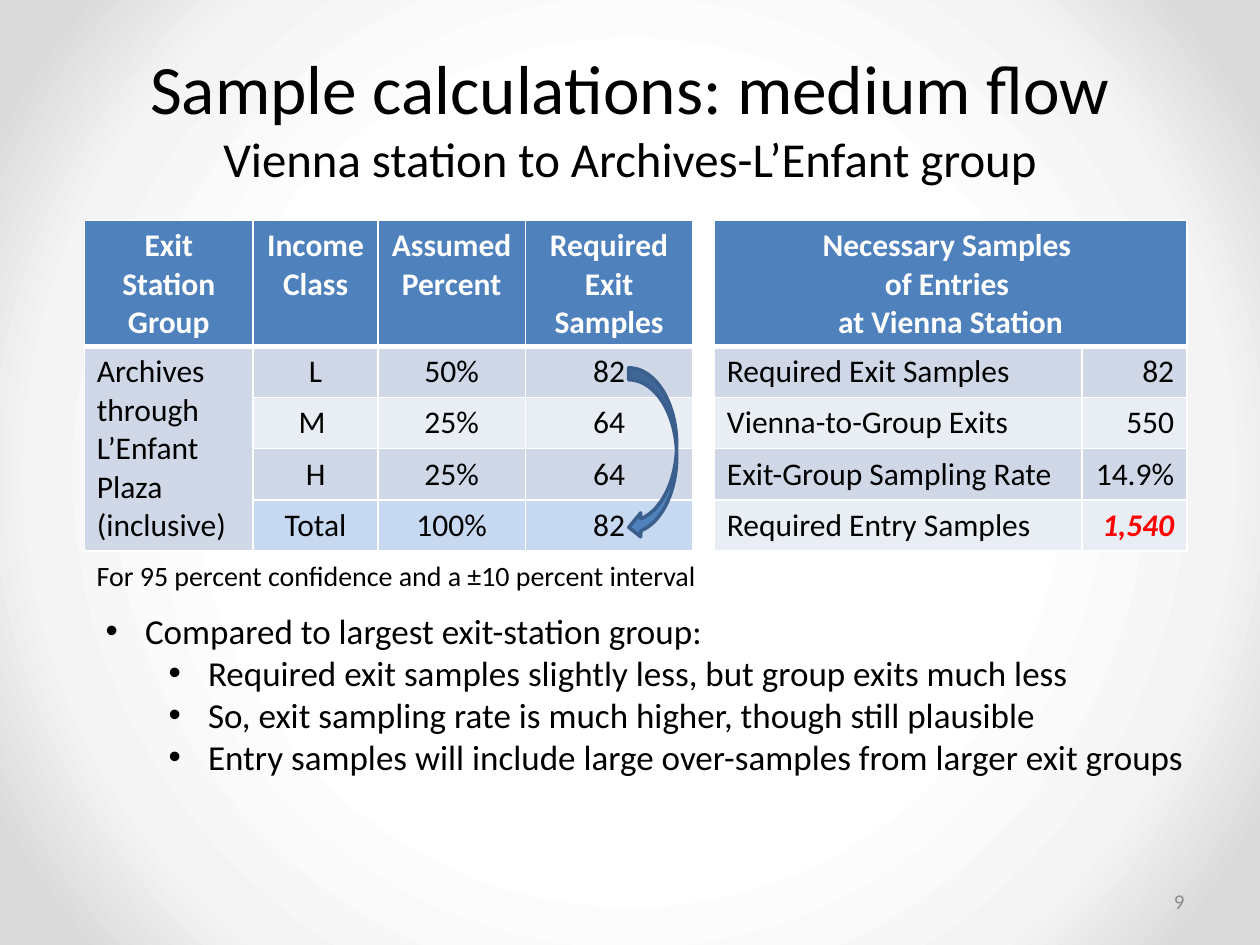
from pptx import Presentation
from pptx.dml.color import RGBColor
from pptx.enum.shapes import MSO_SHAPE
from pptx.enum.text import MSO_ANCHOR, PP_ALIGN
from pptx.oxml import parse_xml
from pptx.oxml.ns import nsdecls
from pptx.util import Pt

LEFT, CENTER, RIGHT = PP_ALIGN.LEFT, PP_ALIGN.CENTER, PP_ALIGN.RIGHT
TOP, MIDDLE = MSO_ANCHOR.TOP, MSO_ANCHOR.MIDDLE
CURVED_ARROW = MSO_SHAPE.CURVED_LEFT_ARROW

FONT = "Calibri"
BLACK, WHITE, GRAY, RED = "000000", "FFFFFF", "8C8C8C", "FF0000"
BLUE, DARK_BLUE, TOTAL_BLUE = "4F81BD", "3A5F8C", "C6D9F1"
BANDS = ("D0D8E8", "E9EDF4")
BACKGROUND_STOPS = ((50, WHITE), (76, "F4F4F4"), (92, "DADADA"))

TABLE_TOP, HEADER_HEIGHT, ROW_HEIGHT = 126, 72, 29.2

EXIT_COLUMNS = (96.5, 71.3, 84.2, 95.8)
EXIT_ROWS = (
    ("Exit Station Group", "Income Class", "Assumed Percent", "Required Exit Samples"),
    ("Archives through L’Enfant Plaza (inclusive)", "L", "50%", "82"),
    ("", "M ", "25%", "64"),
    ("", "H", "25%", "64"),
    ("", "Total", "100%", "82"),
)
ENTRY_COLUMNS = (210, 60)
ENTRY_ROWS = (
    ("Necessary Samples \nof Entries \nat Vienna Station", ""),
    ("Required Exit Samples", "82"),
    ("Vienna-to-Group Exits", "550"),
    ("Exit-Group Sampling Rate", "14.9%"),
    ("Required Entry Samples", "1,540"),
)
BULLETS = (
    (0, "Compared to largest exit-station group:"),
    (1, "Required exit samples slightly less, but group exits much less"),
    (1, "So, exit sampling rate is much higher, though still plausible"),
    (1, "Entry samples will include large over-samples from larger exit groups"),
)


def color(hex_value):
    return RGBColor.from_string(hex_value)


def format_text(frame, size, hex_value=BLACK, align=LEFT, bold=False):
    for para in frame.paragraphs:
        para.alignment = align
        for span in para.runs:
            span.font.name = FONT
            span.font.size = Pt(size)
            span.font.bold = bold
            span.font.color.rgb = color(hex_value)


def add_text(slide, bounds, text, size, hex_value=BLACK, align=LEFT, anchor=TOP):
    box = slide.shapes.add_textbox(*map(Pt, bounds))
    frame = box.text_frame
    frame.word_wrap = True
    frame.vertical_anchor = anchor
    frame.text = text
    format_text(frame, size, hex_value, align)
    return frame


def paint_background(slide):
    """Give the slide a radial gradient that starts at its centre."""
    slide.background.fill.solid()
    properties = slide._element.cSld.bg.bgPr
    stops = "".join(
        f'<a:gs pos="{position * 1000}"><a:srgbClr val="{value}"/></a:gs>'
        for position, value in BACKGROUND_STOPS
    )
    gradient = parse_xml(
        f'<a:gradFill {nsdecls("a")} rotWithShape="1"><a:gsLst>{stops}</a:gsLst>'
        '<a:path path="circle"><a:fillToRect l="50000" t="50000" r="50000" b="50000"/>'
        "</a:path></a:gradFill>"
    )
    properties.replace(properties[0], gradient)


def set_borders(cell, top, bottom):
    """Draw white borders; the side ones are one point wide."""
    properties = cell._tc.get_or_add_tcPr()
    widths = (("lnL", 1), ("lnR", 1), ("lnT", top), ("lnB", bottom))
    for index, (side, width) in enumerate(widths):
        border = parse_xml(
            f'<a:{side} {nsdecls("a")} w="{Pt(width)}"><a:solidFill>'
            f'<a:srgbClr val="{WHITE}"/></a:solidFill></a:{side}>'
        )
        properties.insert(index, border)


def add_banded_table(slide, left, columns, rows, alignments):
    """Add a table with a blue header; alignments are those of the body columns."""
    height = HEADER_HEIGHT + ROW_HEIGHT * (len(rows) - 1)
    bounds = (left, TABLE_TOP, sum(columns), height)
    table = slide.shapes.add_table(len(rows), len(columns), *map(Pt, bounds)).table
    for column, width in zip(table.columns, columns):
        column.width = Pt(width)
    for row_index, texts in enumerate(rows):
        header = row_index == 0
        table.rows[row_index].height = Pt(HEADER_HEIGHT if header else ROW_HEIGHT)
        for column_index, text in enumerate(texts):
            cell = table.cell(row_index, column_index)
            cell.text_frame.text = text
            align = CENTER if header else alignments[column_index]
            format_text(cell.text_frame, 18, WHITE if header else BLACK, align, header)
            fill_cell(cell, BLUE if header else BANDS[(row_index - 1) % 2])
            set_borders(cell, 3 if row_index == 1 else 1, 3 if header else 1)
    return table


def fill_cell(cell, hex_value):
    cell.fill.solid()
    cell.fill.fore_color.rgb = color(hex_value)


def add_exit_table(slide):
    alignments = (LEFT, CENTER, CENTER, CENTER)
    table = add_banded_table(slide, 48.2, EXIT_COLUMNS, EXIT_ROWS, alignments)
    table.cell(1, 0).merge(table.cell(4, 0))
    for column_index in range(1, len(EXIT_COLUMNS)):
        fill_cell(table.cell(4, column_index), TOTAL_BLUE)


def add_entry_table(slide):
    table = add_banded_table(slide, 408.2, ENTRY_COLUMNS, ENTRY_ROWS, (LEFT, RIGHT))
    table.cell(0, 0).merge(table.cell(0, 1))
    result = table.cell(4, 1).text_frame
    format_text(result, 18, RED, RIGHT, True)
    result.paragraphs[0].runs[0].font.italic = True


def add_return_arrow(slide):
    arrow = slide.shapes.add_shape(CURVED_ARROW, Pt(359.3), Pt(210.2), Pt(27.4), Pt(98))
    arrow.shadow.inherit = False
    arrow.fill.solid()
    arrow.fill.fore_color.rgb = color(BLUE)
    arrow.line.color.rgb = color(DARK_BLUE)
    arrow.line.width = Pt(2)


def add_bullets(slide):
    text = "\n".join(line for _, line in BULLETS)
    frame = add_text(slide, (53.3, 344.9, 654.5, 104.4), text, 20)
    for para, (level, _) in zip(frame.paragraphs, BULLETS):
        para.level = level
        properties = para._p.get_or_add_pPr()
        properties.set("marL", str(Pt(22.5 + 36 * level)))
        properties.set("indent", str(Pt(-22.5)))
        properties.append(parse_xml(f'<a:buFont {nsdecls("a")} typeface="Arial"/>'))
        properties.append(parse_xml(f'<a:buChar {nsdecls("a")} char="•"/>'))


def main():
    deck = Presentation()
    deck.slide_width, deck.slide_height = Pt(720), Pt(540)
    slide = deck.slides.add_slide(deck.slide_layouts[6])
    paint_background(slide)

    title = "Sample calculations: medium flow\vVienna station to Archives-L’Enfant group"
    frame = add_text(slide, (36, 21.6, 648, 90), title, 39.6, align=CENTER, anchor=MIDDLE)
    frame.paragraphs[0].runs[1].font.size = Pt(27.9)

    add_exit_table(slide)
    add_return_arrow(slide)
    add_entry_table(slide)
    note = "For 95 percent confidence and a ±10 percent interval"
    add_text(slide, (48.2, 315.4, 450, 26.6), note, 16)
    add_bullets(slide)
    add_text(slide, (516, 500.5, 168, 28.8), "9", 12, GRAY, RIGHT, MIDDLE)
    deck.save("out.pptx")


if __name__ == "__main__":
    main()
